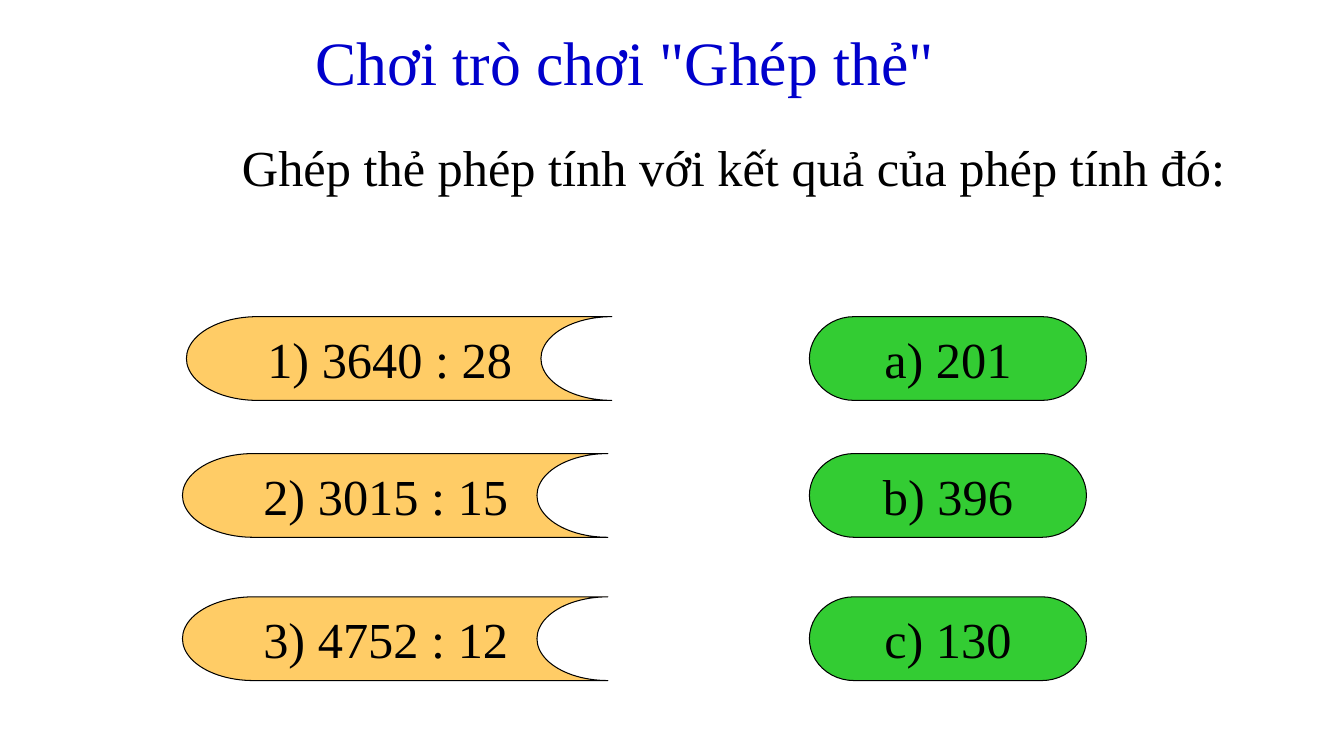
from pptx import Presentation
from pptx.dml.color import RGBColor
from pptx.enum import shapes, text
from pptx.util import Cm, Pt

# Content
TITLE = 'Chơi trò chơi "Ghép thẻ"'
TASK = "Ghép thẻ phép tính với kết quả của phép tính đó:"
# top, left of the sum card, sum, result
ROWS = [
    (7.98, 4.7, "1) 3640 : 28", "a) 201"),
    (11.43, 4.6, "2) 3015 : 15", "b) 396"),
    (15.04, 4.6, "3) 4752 : 12", "c) 130"),
]
FONT = "Times New Roman"
COLORS = {"title": "0000CC", "ink": "000000", "sum": "FFCC66", "result": "33CC33"}
RESULT_LEFT, SUM_WIDTH, RESULT_WIDTH, HEIGHT = 20.4, 10.72, 6.98, 2.11
LEFT, CENTER = text.PP_ALIGN.LEFT, text.PP_ALIGN.CENTER


def color(name):
    return RGBColor.from_string(COLORS[name])


def write(shape, words, align, size=36, ink="ink"):
    frame = shape.text_frame
    frame.word_wrap = True
    frame.auto_size = text.MSO_AUTO_SIZE.NONE
    frame.vertical_anchor = text.MSO_ANCHOR.MIDDLE
    para = frame.paragraphs[0]
    para.alignment = align
    run = para.add_run()
    run.text = words
    run.font.name, run.font.size, run.font.bold = FONT, Pt(size), False
    run.font.color.rgb = color(ink)


def card(kind, left, top, width, fill, words, align):
    shape = slide.shapes.add_shape(kind, Cm(left), Cm(top), Cm(width), Cm(HEIGHT))
    shape.shadow.inherit = False
    shape.fill.solid()
    shape.fill.fore_color.rgb = color(fill)
    shape.line.color.rgb = color("ink")
    shape.line.width = Pt(0.75)
    write(shape, words, align)


deck = Presentation()
deck.slide_width, deck.slide_height = Cm(33.87), Cm(19.05)
slide = deck.slides.add_slide(deck.slide_layouts[5])

# Title and task
title = slide.shapes.title
title.left, title.top, title.width, title.height = Cm(7.32), Cm(0.33), Cm(22.38), Cm(2.41)
title.text_frame.margin_left = Cm(0.64)
write(title, TITLE, LEFT, 44, "title")
task = slide.shapes.add_textbox(Cm(4.78), Cm(2.72), Cm(27.43), Cm(2.97))
write(task, TASK, CENTER)

# Cards: sums on the left, results on the right
KIND = shapes.MSO_SHAPE
for top, left, sum_, result in ROWS:
    card(KIND.FLOWCHART_STORED_DATA, left, top, SUM_WIDTH, "sum", sum_, LEFT)
    card(KIND.FLOWCHART_TERMINATOR, RESULT_LEFT, top, RESULT_WIDTH, "result", result, CENTER)

deck.save("out.pptx")
